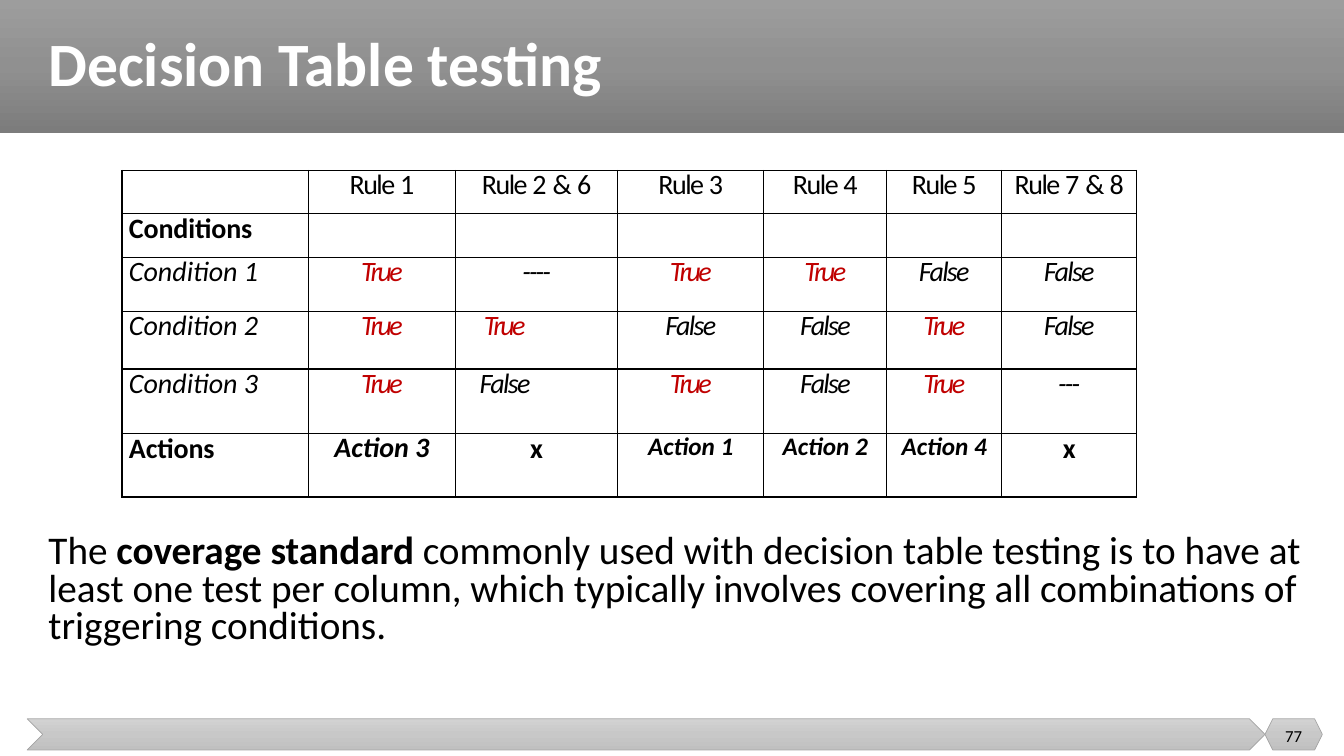
from copy import deepcopy

from pptx import Presentation
from pptx.dml.color import RGBColor
from pptx.enum.shapes import MSO_SHAPE as Preset
from pptx.enum.text import MSO_ANCHOR as Anchor, PP_ALIGN as Align
from pptx.oxml import parse_xml
from pptx.oxml.ns import nsdecls, qn
from pptx.util import Pt


def color(code):
    return RGBColor.from_string(code)


def style(font, size, code="000000", bold=False, italic=False):
    font.name, font.size = "Calibri", Pt(size)
    font.bold, font.italic = bold, italic
    font.color.rgb = color(code)


deck = Presentation()
deck.slide_width, deck.slide_height = Pt(960), Pt(540)
slide = deck.slides.add_slide(deck.slide_layouts[1])
title, coverage = slide.placeholders

# Header band and footer bars, behind the text
header_shades = ["9D9D9D", "909090", "7C7C7C"]
footer_shades = ["D2D2D2", "C8C8C8", "C0C0C0"]
bands = [
    (Preset.RECTANGLE, (0, 0, 960, 95), header_shades, None),
    (Preset.CHEVRON, (19.4, 513.4, 884.2, 22.3), footer_shades, "A5A5A5"),
    (Preset.HEXAGON, (903.6, 513.4, 41, 22.3), footer_shades, "A5A5A5"),
]
for preset, box, shades, outline in bands:
    band = slide.shapes.add_shape(preset, *[Pt(v) for v in box])
    band.shadow.inherit = False
    band.fill.gradient()
    band.fill.gradient_angle = 270
    stops = band.element.find(".//" + qn("a:gsLst"))
    stops.append(deepcopy(stops[0]))
    for stop, position, shade in zip(band.fill.gradient_stops, (0, 0.5, 1), shades):
        stop.position = position
        stop.color.rgb = color(shade)
    if outline:
        band.line.color.rgb = color(outline)
        band.line.width = Pt(0.5)
    else:
        band.line.fill.background()
    title.element.addprevious(band.element)

# Title
title.left, title.top, title.width, title.height = Pt(27.4), Pt(0), Pt(917), Pt(95)
title.text_frame.vertical_anchor = Anchor.MIDDLE
heading = title.text_frame.paragraphs[0]
heading.text = "Decision Table testing"
heading.alignment = Align.LEFT
heading.line_spacing = 0.9
style(heading.font, 44, "FFFFFF", bold=True)

# Coverage statement
coverage.left, coverage.top = Pt(27.4), Pt(378)
coverage.width, coverage.height = Pt(917), Pt(106)
coverage.text_frame.vertical_anchor = Anchor.TOP
statement = coverage.text_frame.paragraphs[0]
statement.line_spacing = 0.8
statement.space_before = Pt(0)
style(statement.font, 28)
bullet = statement._p.get_or_add_pPr()
bullet.set("marL", "0")
bullet.set("indent", "0")
bullet.insert_element_before(parse_xml(f"<a:buNone {nsdecls('a')}/>"), "a:defRPr")
for words, bold in [
    ("The ", False),
    ("coverage standard ", True),
    ("commonly used with decision table testing is to have at least one test per "
     "column, which typically involves covering all combinations of triggering "
     "conditions.", False),
]:
    run = statement.add_run()
    run.text = words
    run.font.bold = bold

# Slide number
number = slide.shapes.add_textbox(Pt(903.6), Pt(511.2), Pt(41), Pt(28.8)).text_frame
number.word_wrap = True
number.vertical_anchor = Anchor.MIDDLE
page = number.paragraphs[0]
page.text = "77"
page.alignment = Align.CENTER
style(page.font, 12)

# Decision table
rules = [
    ["", "Rule 1", "Rule 2 & 6", "Rule 3", "Rule 4", "Rule 5", "Rule 7 & 8"],
    ["Conditions", "", "", "", "", "", ""],
    ["Condition 1", "True", "----", "True", "True", "False", "False"],
    ["Condition 2", "True", "True", "False", "False", "True", "False"],
    ["Condition 3", "True", "False", "True", "False", "True", "---"],
    ["Actions", "Action 3", "x", "Action 1", "Action 2", "Action 4", "x"],
]
widths = [133.2, 105.1, 115.9, 104.4, 87.8, 82.1, 96.5]
heights = [31, 31, 38.9, 41, 46.1, 45.4]
indents = {(3, 2): 20.2, (4, 2): 17.3}  # the two values that are not centred
tracking = {"Rule": -110, "&": -70, "True": -190, "False": -125,
            "----": -140, "---": -130, "Conditions": -10, "Actions": -10}

table = slide.shapes.add_table(len(rules), len(widths), Pt(87.1), Pt(121.7),
                               Pt(sum(widths)), Pt(sum(heights))).table
table.first_row = table.horz_banding = False
for column, width in zip(table.columns, widths):
    column.width = Pt(width)

for r, (values, height) in enumerate(zip(rules, heights)):
    table.rows[r].height = Pt(height)
    for c, value in enumerate(values):
        cell = table.cell(r, c)
        cell.margin_left = cell.margin_right = cell.margin_top = cell.margin_bottom = 0
        borders = cell._tc.get_or_add_tcPr()
        for side in ("lnL", "lnR", "lnT", "lnB"):
            borders.append(parse_xml(
                f'<a:{side} {nsdecls("a")} w="12700"><a:solidFill>'
                f'<a:srgbClr val="000000"/></a:solidFill></a:{side}>'))
        cell.fill.background()
        if not value:
            continue

        entry = cell.text_frame.paragraphs[0]
        indent = 5 if c == 0 else indents.get((r, c))
        if indent:
            entry.alignment = Align.LEFT
            entry._p.get_or_add_pPr().set("marL", str(Pt(indent)))
        else:
            entry.alignment = Align.CENTER
        small = r == 5 and c in (3, 4, 5)
        bold = r in (1, 5)
        entry.line_spacing = Pt(20.5 if small else 23.4 if bold and value != "Action 3" else 22.8)
        style(entry.font, 18 if small else 20,
              "C00000" if value == "True" else "000000", bold,
              italic=r in (2, 3, 4) or value.startswith("Action "))

        # Header words are tracked one by one, other entries as a whole
        words = value.split() if r == 0 else [value]
        for n, word in enumerate(words, 1):
            run = entry.add_run()
            run.text = word if n == len(words) else word + " "
            spacing = tracking.get(word, -30 if r == 0 else 0)
            run.font._element.set("spc", str(spacing))

deck.save("out.pptx")
